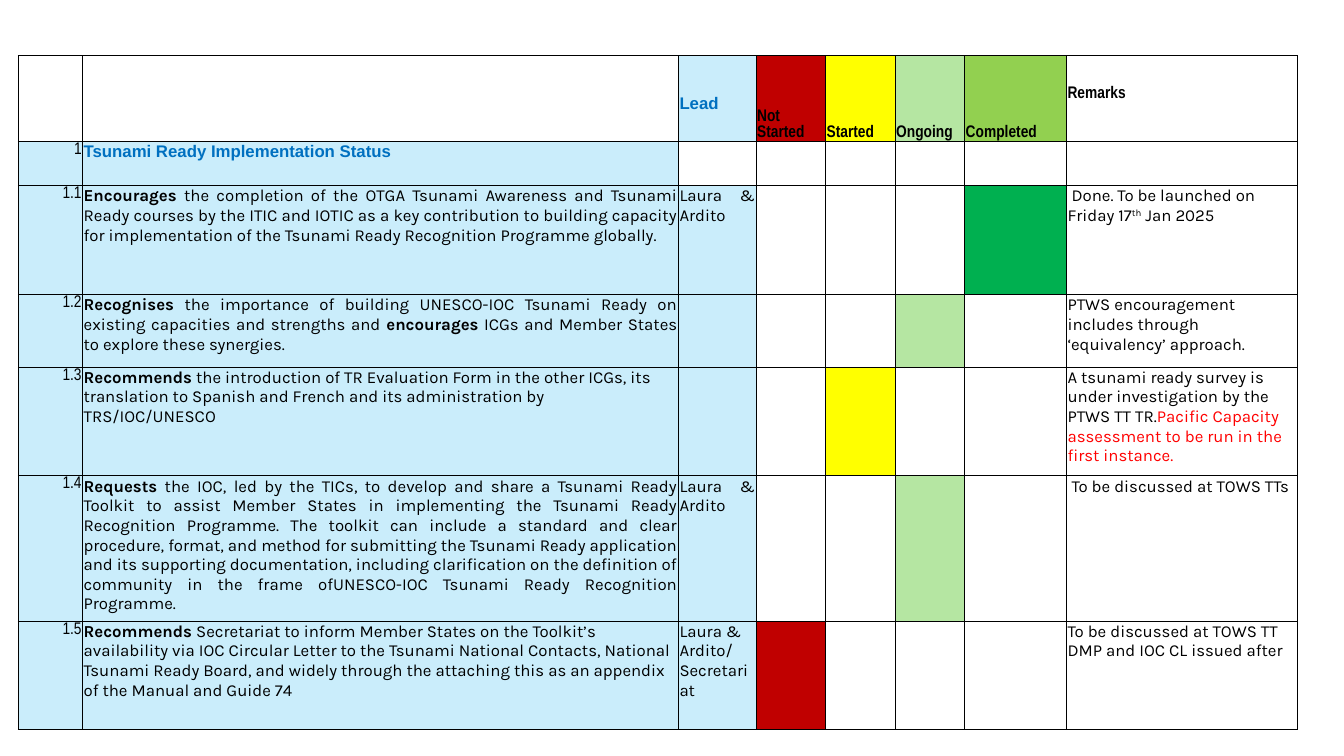
from lxml import etree
from pptx import Presentation
from pptx.dml.color import RGBColor
from pptx.enum.text import MSO_ANCHOR, PP_ALIGN
from pptx.oxml.ns import qn
from pptx.util import Inches, Pt

BLACK = RGBColor(0x00, 0x00, 0x00)
BLUE = RGBColor(0x00, 0x70, 0xC0)
PALE_BLUE = RGBColor(0xCA, 0xED, 0xFB)
ALERT_RED = RGBColor(0xFF, 0x00, 0x00)
RED = RGBColor(0xC0, 0x00, 0x00)
YELLOW = RGBColor(0xFF, 0xFF, 0x00)
LIGHT_GREEN = RGBColor(0xB5, 0xE6, 0xA2)
LIME = RGBColor(0x92, 0xD0, 0x50)
GREEN = RGBColor(0x00, 0xB0, 0x50)

LEFT, JUSTIFY, RIGHT = PP_ALIGN.LEFT, PP_ALIGN.JUSTIFY, PP_ALIGN.RIGHT
COL_WIDTHS = [0.64, 5.91, 0.77, 0.69, 0.69, 0.69, 1.01, 2.29]
ROW_HEIGHTS = [0.85, 0.44, 1.08, 0.72, 1.08, 1.44, 1.08]
NUMBER, ACTION, LEAD, NOT_STARTED, STARTED, ONGOING, COMPLETED, REMARKS = range(8)

STATUS_HEADS = {
    NOT_STARTED: ("Not Started", RED),
    STARTED: ("Started", YELLOW),
    ONGOING: ("Ongoing", LIGHT_GREEN),
    COMPLETED: ("Completed", LIME),
}
STATUS_FILLS = {NOT_STARTED: RED, STARTED: YELLOW, ONGOING: LIGHT_GREEN, COMPLETED: GREEN}

BOLD = {"bold": True}
HEADING = {"font": "Arial", "color": BLUE, "bold": True}
NARROW = {"font": "Arial Narrow"}
NARROW_BOLD = {"font": "Arial Narrow", "bold": True}

# number, action runs, action alignment, lead, lead alignment, status, remark runs
ACTIONS = [
    ("1.1",
     [("Encourages", BOLD),
      (" the completion of the OTGA Tsunami Awareness and Tsunami Ready courses by the ITIC "
       "and IOTIC as a key contribution to building capacity for implementation of the "
       "Tsunami Ready Recognition Programme globally.", {})],
     JUSTIFY, "Laura & Ardito", JUSTIFY, COMPLETED,
     [(" Done. To be launched on Friday 17", {}), ("th", {"raised": True}), (" Jan 2025", {})]),
    ("1.2",
     [("Recognises", BOLD),
      (" the importance of building UNESCO-IOC Tsunami Ready on existing capacities and "
       "strengths and ", {}),
      ("encourages", BOLD),
      (" ICGs and Member States to explore these synergies.", {})],
     JUSTIFY, "", LEFT, ONGOING,
     [("PTWS encouragement includes through ‘equivalency’ approach.", {})]),
    ("1.3",
     [("Recommends", BOLD),
      (" the introduction of TR Evaluation Form in the other ICGs, its translation to Spanish "
       "and French and its administration by TRS/IOC/UNESCO", {})],
     LEFT, "", LEFT, STARTED,
     [("A tsunami ready survey is under investigation by the PTWS TT TR.", {}),
      ("Pacific Capacity assessment to be run in the first instance.", {"color": ALERT_RED})]),
    ("1.4",
     [("Requests", BOLD),
      (" the IOC, led by the TICs, to develop and share a Tsunami Ready Toolkit to assist "
       "Member States in implementing the Tsunami Ready Recognition Programme. The toolkit "
       "can include a standard and clear procedure, format, and method for submitting the "
       "Tsunami Ready application and its supporting documentation, including clarification "
       "on the definition of community in the frame ofUNESCO-IOC Tsunami Ready Recognition "
       "Programme. ", {})],
     JUSTIFY, "Laura & Ardito", JUSTIFY, ONGOING,
     [(" To be discussed at TOWS TTs", {})]),
    ("1.5",
     [("Recommends", BOLD),
      (" Secretariat to inform Member States on the Toolkit’s availability via IOC Circular "
       "Letter to the Tsunami National Contacts, National Tsunami Ready Board, and widely "
       "through the attaching this as an appendix of the Manual and Guide 74", {})],
     LEFT, "Laura & Ardito/ Secretariat", LEFT, NOT_STARTED,
     [("To be discussed at TOWS TT DMP and IOC CL issued after", {})]),
]


def add_borders(cell):
    tcPr = cell._tc.get_or_add_tcPr()
    for i, side in enumerate(("a:lnL", "a:lnR", "a:lnT", "a:lnB")):
        ln = etree.Element(qn(side), w=str(Pt(0.5)))
        fill = etree.SubElement(ln, qn("a:solidFill"))
        etree.SubElement(fill, qn("a:srgbClr"), val=str(BLACK))
        tcPr.insert(i, ln)


def paint(cell, color):
    cell.fill.solid()
    cell.fill.fore_color.rgb = color


def write(cell, runs, align=LEFT):
    """Fill the cell with (text, style) runs, in black 12 pt Karla by default."""
    p = cell.text_frame.paragraphs[0]
    p.alignment = align
    for text, style in runs:
        r = p.add_run()
        r.text = text
        r.font.size = Pt(12)
        r.font.name = style.get("font", "Karla")
        r.font.bold = style.get("bold", False)
        r.font.color.rgb = style.get("color", BLACK)
        if style.get("raised"):
            r.font._element.set("baseline", "30000")


def add_grid(slide, left, top):
    """Add the empty, bordered table and return it."""
    frame = slide.shapes.add_table(
        len(ROW_HEIGHTS), len(COL_WIDTHS), Inches(left), Inches(top),
        Inches(sum(COL_WIDTHS)), Inches(sum(ROW_HEIGHTS)))
    table = frame.table
    table.first_row = table.horz_banding = False
    for column, width in zip(table.columns, COL_WIDTHS):
        column.width = Inches(width)
    for row, height in zip(table.rows, ROW_HEIGHTS):
        row.height = Inches(height)
    for cell in table.iter_cells():
        cell.margin_left = cell.margin_right = cell.margin_top = Inches(0.01)
        cell.margin_bottom = 0
        cell.fill.background()
        add_borders(cell)
    return table


def fill_header(table):
    lead = table.cell(0, LEAD)
    paint(lead, PALE_BLUE)
    lead.margin_top = Inches(0.38)
    write(lead, [("Lead", HEADING)], JUSTIFY)
    for col, (label, color) in STATUS_HEADS.items():
        cell = table.cell(0, col)
        paint(cell, color)
        cell.vertical_anchor = MSO_ANCHOR.BOTTOM
        write(cell, [(label, NARROW_BOLD)])
    remarks = table.cell(0, REMARKS)
    remarks.margin_top = Inches(0.31)
    write(remarks, [("Remarks", NARROW_BOLD)])


def fill_section(table, row, number, title):
    for col in (NUMBER, ACTION):
        paint(table.cell(row, col), PALE_BLUE)
    write(table.cell(row, NUMBER), [(number, NARROW)], RIGHT)
    write(table.cell(row, ACTION), [(title, HEADING)], JUSTIFY)


def fill_action(table, row, number, action, action_align, lead, lead_align, status, remark):
    for col in (NUMBER, ACTION, LEAD):
        paint(table.cell(row, col), PALE_BLUE)
    paint(table.cell(row, status), STATUS_FILLS[status])
    write(table.cell(row, NUMBER), [(number, NARROW)], RIGHT)
    write(table.cell(row, ACTION), action, action_align)
    if lead:
        write(table.cell(row, LEAD), [(lead, {})], lead_align)
    write(table.cell(row, REMARKS), remark)


def main():
    prs = Presentation()
    prs.slide_width, prs.slide_height = Inches(13.33), Inches(7.5)
    slide = prs.slides.add_slide(prs.slide_layouts[6])
    table = add_grid(slide, 0.18, 0.55)
    fill_header(table)
    fill_section(table, 1, "1", "Tsunami Ready Implementation Status")
    for row, action in enumerate(ACTIONS, start=2):
        fill_action(table, row, *action)
    prs.save("out.pptx")


if __name__ == "__main__":
    main()
